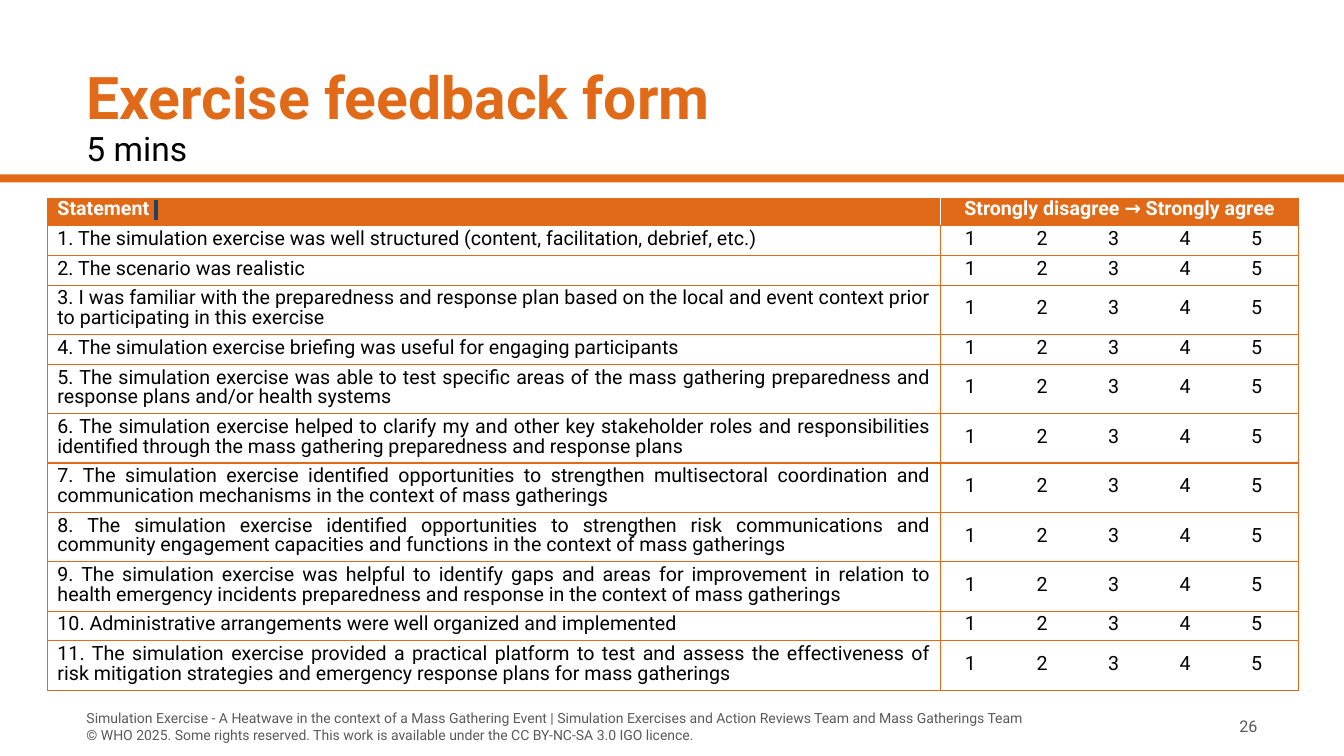
import pptx
import pptx.util
import pptx.dml.color
import pptx.enum.shapes
import pptx.enum.text
import pptx.oxml
import pptx.oxml.ns
from lxml import etree

Inches, Pt = pptx.util.Inches, pptx.util.Pt
ALIGN = pptx.enum.text.PP_ALIGN
ANCHOR = pptx.enum.text.MSO_ANCHOR
COLORS = {"orange": "E16A18", "white": "FFFFFF", "black": "000000",
          "grey": "595959", "navy": "244061"}

STATEMENTS = [
    "The simulation exercise was well structured (content, facilitation, debrief, etc.)",
    "The scenario was realistic",
    "I was familiar with the preparedness and response plan based on the local and event "
    "context prior to participating in this exercise",
    "The simulation exercise briefing was useful for engaging participants",
    "The simulation exercise was able to test specific areas of the mass gathering "
    "preparedness and response plans and/or health systems",
    "The simulation exercise helped to clarify my and other key stakeholder roles and "
    "responsibilities identified through the mass gathering preparedness and response plans",
    "The simulation exercise identified opportunities to strengthen multisectoral "
    "coordination and communication mechanisms in the context of mass gatherings",
    "The simulation exercise identified opportunities to strengthen risk communications and "
    "community engagement capacities and functions in the context of mass gatherings",
    "The simulation exercise was helpful to identify gaps and areas for improvement in "
    "relation to health emergency incidents preparedness and response in the context of "
    "mass gatherings",
    "Administrative arrangements were well organized and implemented",
    "The simulation exercise provided a practical platform to test and assess the "
    "effectiveness of risk mitigation strategies and emergency response plans for mass "
    "gatherings",
]
RATINGS = range(1, 6)
LINE_CHARS = 90  # longer statements take two lines


def rgb(name):
    return pptx.dml.color.RGBColor.from_string(COLORS[name])


def add_text(p, text, size=14, color="black", bold=False, align=ALIGN.LEFT,
             spacing=None, font="Roboto", highlight=None):
    """Append text to a paragraph; a newline becomes a line break."""
    p.alignment = align
    if spacing is not None:
        p.line_spacing = spacing
    for i, line in enumerate(text.split("\n")):
        if i:
            p.add_line_break()
        r = p.add_run()
        r.text = line
        r.font.name, r.font.size, r.font.bold = font, Pt(size), bold
        r.font.color.rgb = rgb(color)
        if highlight:
            mark = pptx.oxml.parse_xml(
                f'<a:highlight {pptx.oxml.ns.nsdecls("a")}>'
                f'<a:srgbClr val="{COLORS[highlight]}"/></a:highlight>')
            r.font.fill  # fill precedes the highlight
            r.font._element.find(pptx.oxml.ns.qn("a:solidFill")).addnext(mark)


class FormSlide:
    def __init__(self, prs):
        self.s = prs.slides.add_slide(prs.slide_layouts[6])

    def bar(self, x, y, w, h, color):
        sp = self.s.shapes.add_shape(pptx.enum.shapes.MSO_SHAPE.RECTANGLE,
                                     Inches(x), Inches(y), Inches(w), Inches(h))
        sp.shadow.inherit = False
        sp.fill.solid()
        sp.fill.fore_color.rgb = rgb(color)
        sp.line.fill.background()

    def text(self, x, y, w, h, text, anchor=ANCHOR.TOP, inset=0.05, **fmt):
        tf = self.s.shapes.add_textbox(Inches(x), Inches(y), Inches(w), Inches(h)).text_frame
        tf.word_wrap = True
        tf.vertical_anchor = anchor
        tf.margin_top = tf.margin_bottom = Inches(inset)
        add_text(tf.paragraphs[0], text, **fmt)

    def table(self, x, y, widths, heights):
        tbl = self.s.shapes.add_table(len(heights), len(widths), Inches(x), Inches(y),
                                      Inches(sum(widths)), Inches(sum(heights))).table
        tbl.first_row = tbl.horz_banding = False
        for col, w in zip(tbl.columns, widths):
            col.width = Inches(w)
        for row, h in zip(tbl.rows, heights):
            row.height = Inches(h)
        return tbl

    def cell(self, cell, fill=None, anchor=ANCHOR.MIDDLE, left=0.1, right=0.1, **borders):
        """Style a cell; borders maps L, R, T, B to colour names."""
        cell.vertical_anchor = anchor
        cell.margin_left, cell.margin_right = Inches(left), Inches(right)
        tc_pr = cell._tc.get_or_add_tcPr()
        for side in "LRTB":
            ln = etree.SubElement(tc_pr, pptx.oxml.ns.qn(f"a:ln{side}"), w=str(Pt(1)))
            if side in borders:
                solid = etree.SubElement(ln, pptx.oxml.ns.qn("a:solidFill"))
                etree.SubElement(solid, pptx.oxml.ns.qn("a:srgbClr"),
                                 val=COLORS[borders[side]])
            else:
                etree.SubElement(ln, pptx.oxml.ns.qn("a:noFill"))
        if fill:
            cell.fill.solid()
            cell.fill.fore_color.rgb = rgb(fill)
        else:
            cell.fill.background()
        return cell.text_frame.paragraphs[0]


def main():
    prs = pptx.Presentation()
    prs.slide_width, prs.slide_height = Inches(13.33), Inches(7.5)
    form = FormSlide(prs)

    # Rule and footer
    form.bar(0, 1.73, 13.33, 0.08, "orange")
    form.text(11.59, 7.03, 0.98, 0.35, "26", ANCHOR.MIDDLE,
              size=11.5, color="grey", align=ALIGN.RIGHT)
    form.text(0.76, 7.03, 10.83, 0.35,
              "Simulation Exercise - A Heatwave in the context of a Mass Gathering Event | "
              "Simulation Exercises and Action Reviews Team and Mass Gatherings Team\n"
              "© WHO 2025. Some rights reserved. This work is available under the "
              "CC BY-NC-SA 3.0 IGO licence.", ANCHOR.MIDDLE, size=10, color="grey")

    # Title and duration
    form.text(0.76, 0.51, 9.84, 0.79, "Exercise feedback form", ANCHOR.BOTTOM, inset=0,
              size=42, color="orange", bold=True, spacing=0.8)
    form.text(0.76, 1.3, 9.84, 0.39, "5 mins", size=24, spacing=0.8)

    # Feedback table
    heights = [0.27] + [0.49 if len(t) > LINE_CHARS else 0.29 for t in STATEMENTS]
    tbl = form.table(0.47, 1.97, [8.86] + [0.71] * len(RATINGS), heights)

    # Header row
    edges = dict.fromkeys("LRTB", "orange")
    head = dict(color="white", bold=True, spacing=Pt(12))
    p = form.cell(tbl.cell(0, 0), "orange", **{**edges, "R": "white"})
    add_text(p, "Statement ", **head)
    add_text(p, " ", size=12, spacing=Pt(12), highlight="navy")
    tbl.cell(0, 1).merge(tbl.cell(0, len(RATINGS)))
    p = form.cell(tbl.cell(0, 1), "orange", left=0, right=0, **{**edges, "L": "white"})
    add_text(p, "Strongly disagree → Strongly agree", align=ALIGN.CENTER, **head)

    # Statements with their rating scale
    for row, statement in enumerate(STATEMENTS, 1):
        p = form.cell(tbl.cell(row, 0), anchor=ANCHOR.TOP, **edges)
        add_text(p, f"{row}. {statement}", align=ALIGN.JUSTIFY, spacing=Pt(14))
        for rating in RATINGS:
            sides = "TB" + {1: "L", 5: "R"}.get(rating, "")
            p = form.cell(tbl.cell(row, rating), right=0.22, **dict.fromkeys(sides, "orange"))
            add_text(p, str(rating), align=ALIGN.CENTER, spacing=Pt(14))

    prs.save("out.pptx")


if __name__ == "__main__":
    main()
